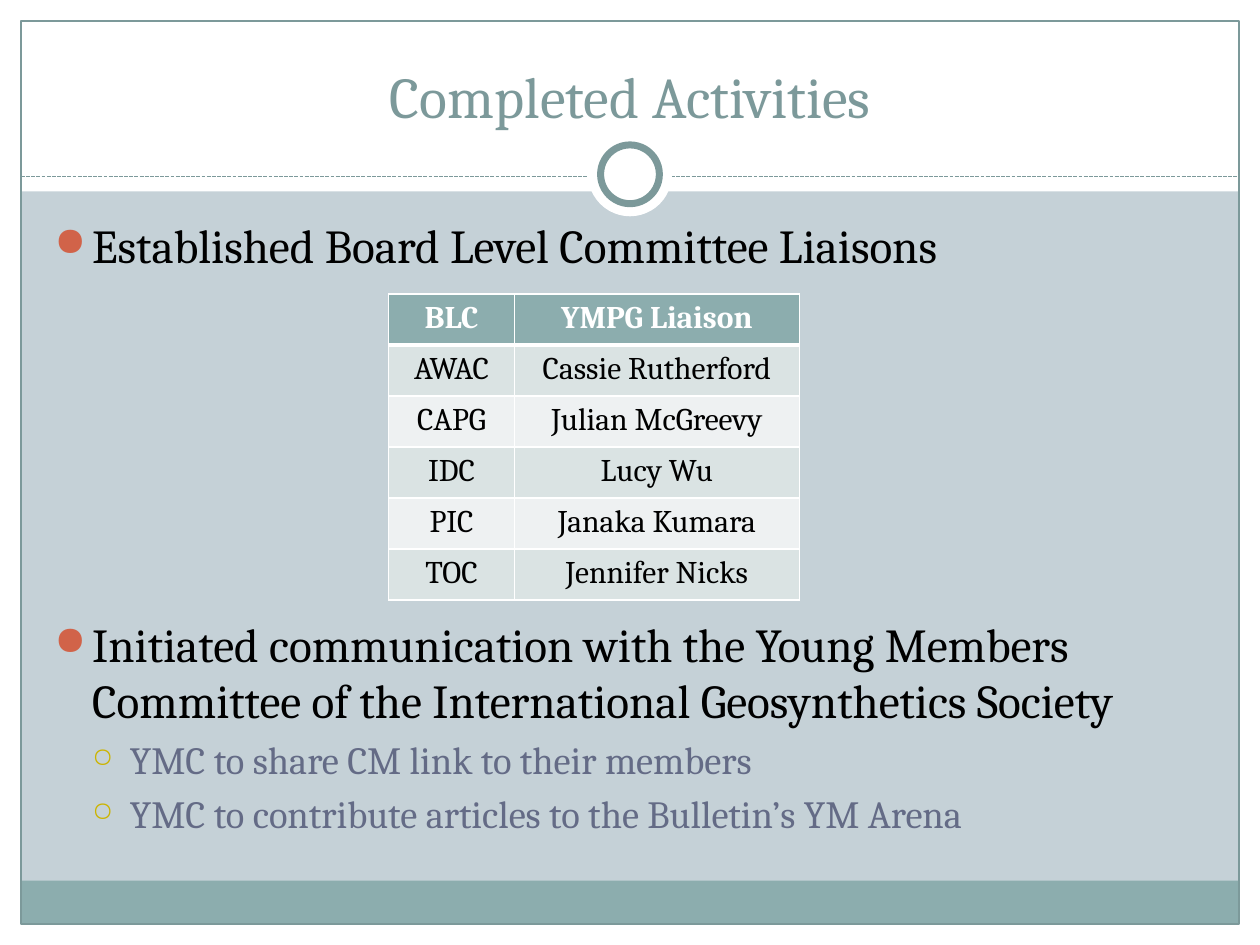
from lxml import etree
from pptx import Presentation
from pptx.dml.color import RGBColor
from pptx.enum.dml import MSO_LINE
from pptx.enum.shapes import MSO_CONNECTOR, MSO_SHAPE
from pptx.enum.text import MSO_ANCHOR, PP_ALIGN
from pptx.oxml.ns import qn
from pptx.util import Inches, Pt

RECT, OVAL = MSO_SHAPE.RECTANGLE, MSO_SHAPE.OVAL
STRAIGHT, DASH = MSO_CONNECTOR.STRAIGHT, MSO_LINE.SQUARE_DOT
CENTER, BOTTOM, MIDDLE = PP_ALIGN.CENTER, MSO_ANCHOR.BOTTOM, MSO_ANCHOR.TOP
FONT = "Cambria"
COLORS = {
    "ground": "C5D1D7", "white": "FFFFFF", "teal": "8CADAE", "edge": "7C999A",
    "black": "000000", "slate": "646B86", "red": "D16349", "gold": "CCB400",
    "odd": "DAE3E3", "even": "EEF1F2",
}
COLUMNS, ROWS = 60, 45

deck = Presentation()
deck.slide_width, deck.slide_height = Inches(10), Inches(7.5)
cell_size = deck.slide_width / COLUMNS
page = deck.slides.add_slide(deck.slide_layouts[6])
page.background.fill.solid()
page.background.fill.fore_color.rgb = RGBColor.from_string(COLORS["ground"])


def grid(*counts):
    return [round(count * cell_size) for count in counts]


def add_span(para, text, size, color, bold=False):
    span = para.add_run()
    span.text = text
    span.font.name = FONT
    span.font.size = Pt(size)
    span.font.bold = bold
    span.font.color.rgb = RGBColor.from_string(COLORS[color])


panels = [
    (RECT, (0, 44, COLUMNS, 1), "white", None),
    (RECT, (0, 0, COLUMNS, 9.12), "white", None),
    (RECT, (0, 0, 1, ROWS), "white", None),
    (RECT, (59, 0, 1, ROWS), "white", None),
    (RECT, (1, 41.94, 58, 2.06), "teal", None),
    (RECT, (1, 1, 58, 43), None, 0.75),
    (None, (1, 8.4, 59, 8.4), None, 0.75),
    (OVAL, (28, 6.3, 4, 4), "white", None),
    (OVAL, (28.6, 6.9, 2.8, 2.8), "white", 4),
]
for kind, place, fill, width in panels:
    if kind is None:
        shape = page.shapes.add_connector(STRAIGHT, *grid(*place))
        shape.line.dash_style = DASH
        etree.SubElement(shape.element.spPr, qn("a:effectLst"))
    else:
        shape = page.shapes.add_shape(kind, *grid(*place))
        shape.shadow.inherit = False
        if fill:
            shape.fill.solid()
            shape.fill.fore_color.rgb = RGBColor.from_string(COLORS[fill])
        else:
            shape.fill.background()
    if width:
        shape.line.color.rgb = RGBColor.from_string(COLORS["edge"])
        shape.line.width = Pt(width)
    else:
        shape.line.fill.background()

title_box = page.shapes.add_textbox(*grid(2, 1.5, 56, 5))
title_box.text_frame.word_wrap = True
title_box.text_frame.vertical_anchor = BOTTOM
title = title_box.text_frame.paragraphs[0]
title.alignment = CENTER
add_span(title, "Completed Activities", 33, "edge")

levels = [
    {"size": 27, "color": "black", "bullet": "●", "bullet_color": "red", "share": 85},
    {"size": 22, "color": "slate", "bullet": "○", "bullet_color": "gold", "share": 70},
]
points = [
    (0, 5.4, "Established Board Level Committee Liaisons"),
    (0, 195.4, "Initiated communication with the Young Members "
               "Committee of the International Geosynthetics Society"),
    (1, 4.4, "YMC to share CM link to their members"),
    (1, 4.4, "YMC to contribute articles to the Bulletin’s YM Arena"),
]
body = page.shapes.add_textbox(*grid(2, 10, 57, 32)).text_frame
body.word_wrap = True
for index, (level, gap, text) in enumerate(points):
    style = levels[level]
    para = body.add_paragraph() if index else body.paragraphs[0]
    para.level = level
    para.space_before = Pt(gap)
    add_span(para, text, style["size"], style["color"])
    properties = para._p.get_or_add_pPr()
    properties.set("marL", str(Inches(0.3 * (level + 1))))
    properties.set("indent", str(-Inches(0.3)))
    bullet_color = etree.SubElement(properties, qn("a:buClr"))
    etree.SubElement(bullet_color, qn("a:srgbClr"), val=COLORS[style["bullet_color"]])
    etree.SubElement(properties, qn("a:buSzPct"), val=str(style["share"] * 1000))
    etree.SubElement(properties, qn("a:buChar"), char=style["bullet"])

liaisons = [
    ("BLC", "YMPG Liaison"),
    ("AWAC", "Cassie Rutherford"),
    ("CAPG", "Julian McGreevy"),
    ("IDC", "Lucy Wu"),
    ("PIC", "Janaka Kumara"),
    ("TOC", "Jennifer Nicks"),
]
column_widths = grid(6, 13.56)
row_height = grid(2.43)[0]
table = page.shapes.add_table(
    len(liaisons), len(column_widths), *grid(18.5, 14),
    sum(column_widths), row_height * len(liaisons)).table
for column, width in zip(table.columns, column_widths):
    column.width = width
for row_index, names in enumerate(liaisons):
    table.rows[row_index].height = row_height
    header = row_index == 0
    fill = "teal" if header else ("even", "odd")[row_index % 2]
    for column_index, name in enumerate(names):
        cell = table.cell(row_index, column_index)
        cell.vertical_anchor = MIDDLE
        cell.fill.solid()
        cell.fill.fore_color.rgb = RGBColor.from_string(COLORS[fill])
        para = cell.text_frame.paragraphs[0]
        para.alignment = CENTER
        add_span(para, name, 18, "white" if header else "black", header)
        thick = {0: "lnB", 1: "lnT"}.get(row_index)
        for order, side in enumerate(("lnL", "lnR", "lnT", "lnB")):
            border = etree.Element(qn("a:" + side), w=str(Pt(3 if side == thick else 1)))
            paint = etree.SubElement(border, qn("a:solidFill"))
            etree.SubElement(paint, qn("a:srgbClr"), val=COLORS["white"])
            cell._tc.get_or_add_tcPr().insert(order, border)

deck.save("out.pptx")
